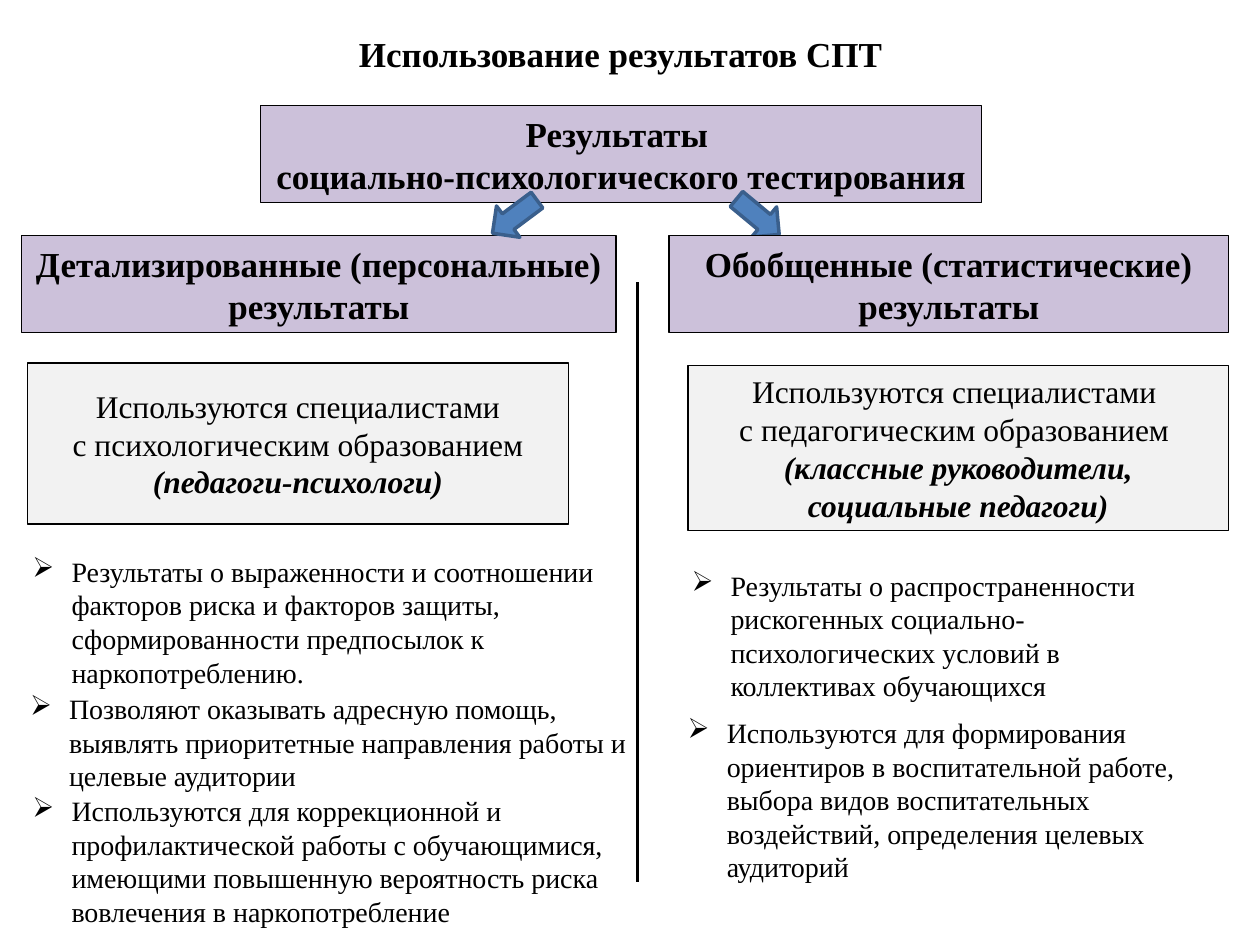
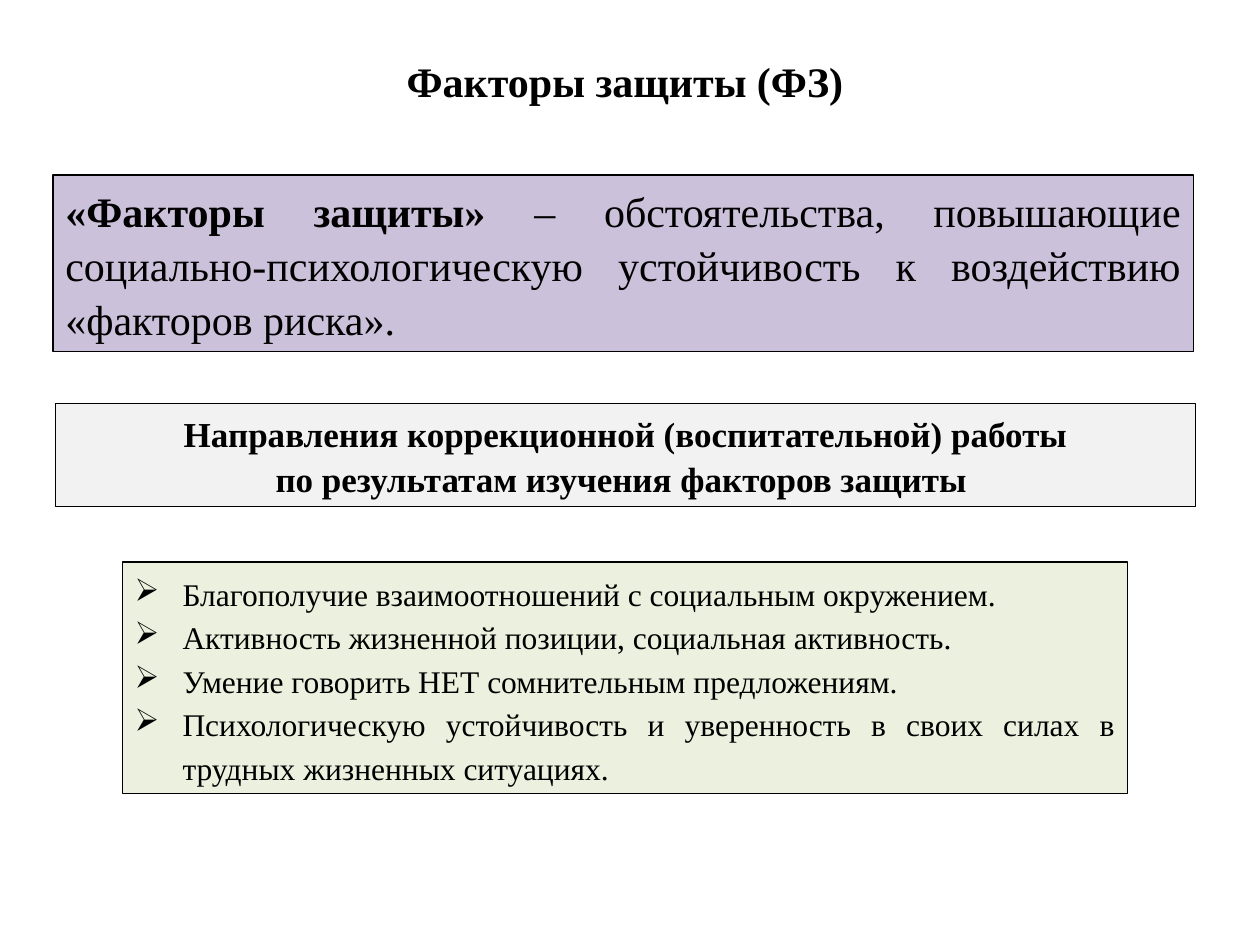
from lxml import etree
from pptx import Presentation
from pptx.dml.color import RGBColor
from pptx.enum.shapes import MSO_CONNECTOR, MSO_SHAPE
from pptx.enum.text import MSO_ANCHOR as ANCHOR, PP_ALIGN as ALIGN
from pptx.oxml.ns import qn
from pptx.util import Inches, Pt

BLACK = RGBColor(0x00, 0x00, 0x00)
LILAC = RGBColor(0xCC, 0xC1, 0xDA)
GREY = RGBColor(0xF2, 0xF2, 0xF2)
GREEN = RGBColor(0xEB, 0xF1, 0xDE)
BLUE = RGBColor(0x4F, 0x81, 0xBD)
DARK_BLUE = RGBColor(0x3A, 0x5F, 0x8C)
FONT = "Times New Roman"
BULLET = "➢"


class Deck:
    """Shared style and the current slide."""

    def __init__(self):
        self.prs = Presentation()
        self.prs.slide_width, self.prs.slide_height = Inches(10), Inches(7.5)

    def new_slide(self):
        self.slide = self.prs.slides.add_slide(self.prs.slide_layouts[6])

    def add_text(self, sp, paras, size, align, spacing=None, indent=None, inset=0.1):
        """Fill a shape; each paragraph is a list of (text, style) runs, style from 'bi'."""
        tf = sp.text_frame
        tf.word_wrap = True
        tf.margin_left = tf.margin_right = Inches(inset)
        for i, runs in enumerate(paras):
            p = tf.paragraphs[0] if i == 0 else tf.add_paragraph()
            p.alignment = align
            if spacing:
                p.line_spacing = spacing
            if indent:
                pPr = p._p.get_or_add_pPr()
                pPr.set("marL", str(Inches(indent)))
                pPr.set("indent", str(-Inches(indent)))
                etree.SubElement(pPr, qn("a:buChar")).set("char", BULLET)
            for text, style in runs:
                r = p.add_run()
                r.text = text
                r.font.name, r.font.size = FONT, Pt(size)
                r.font.color.rgb = BLACK
                r.font.bold, r.font.italic = "b" in style, "i" in style

    def shape(self, kind, at, fill, line, width):
        sp = self.slide.shapes.add_shape(kind, *map(Inches, at))
        sp.shadow.inherit = False
        sp.fill.solid()
        sp.fill.fore_color.rgb = fill
        sp.line.color.rgb, sp.line.width = line, Pt(width)
        return sp

    def box(self, at, fill, paras, size, align=ALIGN.CENTER, **layout):
        sp = self.shape(MSO_SHAPE.RECTANGLE, at, fill, BLACK, 0.75)
        sp.text_frame.vertical_anchor = ANCHOR.MIDDLE
        self.add_text(sp, paras, size, align, **layout)

    def heading(self, at, fill, lines, **layout):
        self.box(at, fill, [[(line, "b")] for line in lines], 20, inset=0.05, **layout)

    def title(self, at, text, size):
        sp = self.slide.shapes.add_textbox(*map(Inches, at))
        self.add_text(sp, [[(text, "b")]], size, ALIGN.CENTER, inset=0.05)

    def bullet(self, at, text):
        sp = self.slide.shapes.add_textbox(*map(Inches, at))
        self.add_text(sp, [[(text, "")]], 16, ALIGN.LEFT, indent=0.31)

    def arrow(self, left, angle):
        sp = self.shape(MSO_SHAPE.DOWN_ARROW, (left, 1.5, 0.31, 0.44), BLUE, DARK_BLUE, 2)
        sp.rotation = angle

    def divider(self, x, top, bottom):
        ends = map(Inches, (x, top, x, bottom))
        ln = self.slide.shapes.add_connector(MSO_CONNECTOR.STRAIGHT, *ends)
        ln.line.color.rgb, ln.line.width = BLACK, Pt(1.5)
        etree.SubElement(ln._element.spPr, qn("a:effectLst"))


def results_slide(deck):
    deck.new_slide()
    deck.title((2.73, 0.21, 4.39, 0.44), "Использование результатов СПТ", 20)

    # Top box and the two branches
    deck.heading((2.07, 0.84, 5.72, 0.77), LILAC,
                 ["Результаты ", "социально-психологического тестирования"])
    deck.heading((0.17, 1.87, 4.72, 0.77), LILAC,
                 ["Детализированные (персональные)", "результаты"])
    deck.arrow(3.93, 53.3)
    deck.arrow(5.86, 309.7)
    deck.heading((5.31, 1.87, 4.44, 0.77), LILAC,
                 ["Обобщенные (статистические)", "результаты"])
    deck.divider(5.06, 2.24, 7)

    # Who uses the results
    deck.box((0.22, 2.88, 4.29, 1.28), GREY, [
        [("Используются специалистами", "")],
        [("с психологическим образованием", "")],
        [("(педагоги-психологи)", "bi")]], 18)
    deck.box((5.46, 2.9, 4.29, 1.31), GREY, [
        [("Используются специалистами ", "")],
        [("с педагогическим образованием ", "")],
        [("(классные руководители, социальные педагоги)", "bi")]], 18)

    # What the results are for
    for at, text in [
        ((0.16, 4.35, 4.84, 1.18),
         "Результаты о выраженности и соотношении факторов риска и факторов защиты, "
         "сформированности предпосылок к наркопотреблению."),
        ((0.14, 5.44, 5, 0.91),
         "Позволяют оказывать адресную помощь, выявлять приоритетные направления "
         "работы и целевые аудитории"),
        ((0.16, 6.25, 4.84, 1.18),
         "Используются для коррекционной и профилактической работы с обучающимися, "
         "имеющими повышенную вероятность риска вовлечения в наркопотребление"),
        ((5.39, 4.46, 4.3, 1.18),
         "Результаты о распространенности рискогенных социально-психологических "
         "условий в коллективах обучающихся"),
        ((5.36, 5.63, 4.59, 1.45),
         "Используются для формирования ориентиров в воспитательной работе, выбора "
         "видов воспитательных воздействий, определения целевых аудиторий"),
    ]:
        deck.bullet(at, text)


def protection_slide(deck):
    deck.new_slide()
    deck.title((0.64, 0.39, 8.64, 0.5), "Факторы защиты (ФЗ)", 24)

    # Definition
    deck.box((0.42, 1.39, 9.05, 1.4), LILAC, [
        [("«Факторы защиты» ", "b"),
         ("– обстоятельства, повышающие социально-психологическую устойчивость "
          "к воздействию «факторов риска».", "")]], 24, ALIGN.JUSTIFY, spacing=1.07)

    # Directions of work
    deck.heading((0.44, 3.2, 9.05, 0.82), GREY,
                 ["Направления коррекционной (воспитательной) работы",
                  "по результатам изучения факторов защиты "], spacing=1.07)
    directions = [
        "Благополучие взаимоотношений с социальным окружением.",
        "Активность жизненной позиции, социальная активность.",
        "Умение говорить НЕТ сомнительным предложениям.",
        "Психологическую устойчивость и уверенность в своих силах в трудных "
        "жизненных ситуациях.",
    ]
    deck.box((0.97, 4.46, 7.98, 1.84), GREEN, [[(d, "")] for d in directions], 18,
             ALIGN.JUSTIFY, spacing=1.15, indent=0.38)


def main():
    deck = Deck()
    results_slide(deck)
    protection_slide(deck)
    deck.prs.save("out.pptx")


if __name__ == "__main__":
    main()
